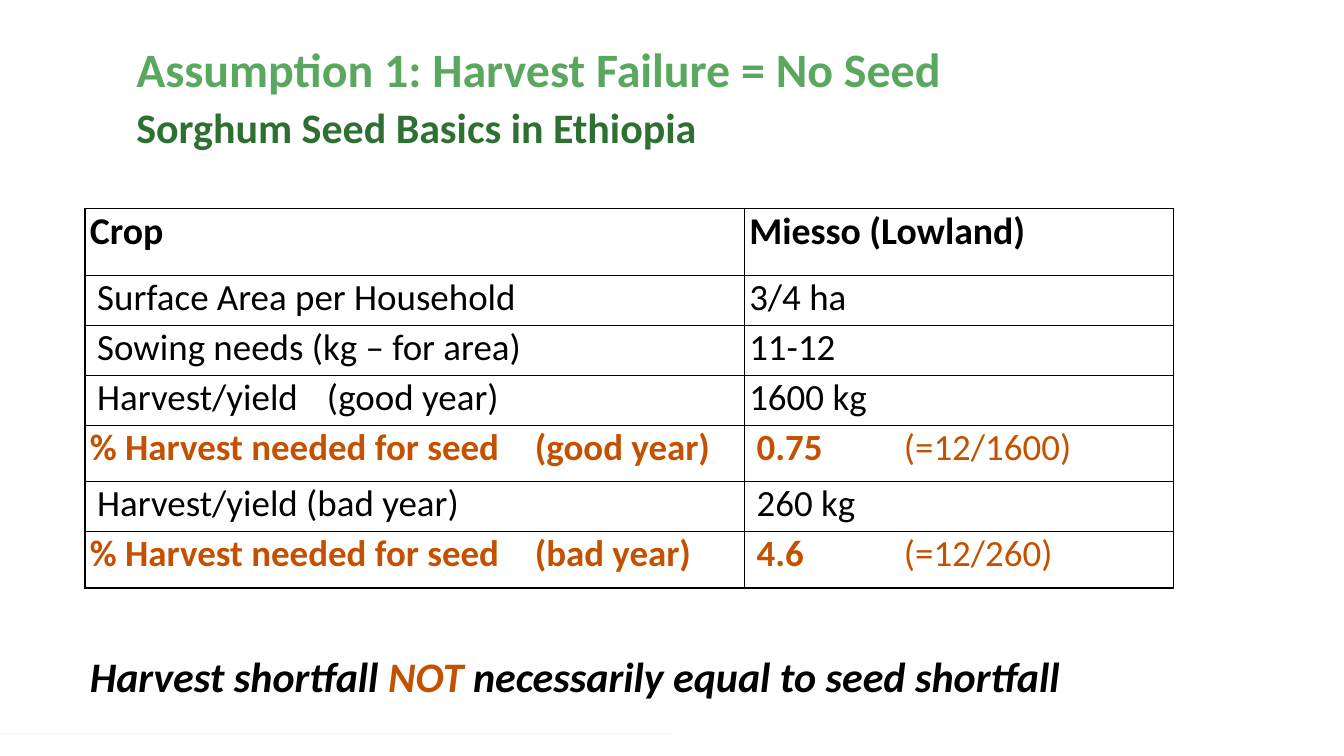
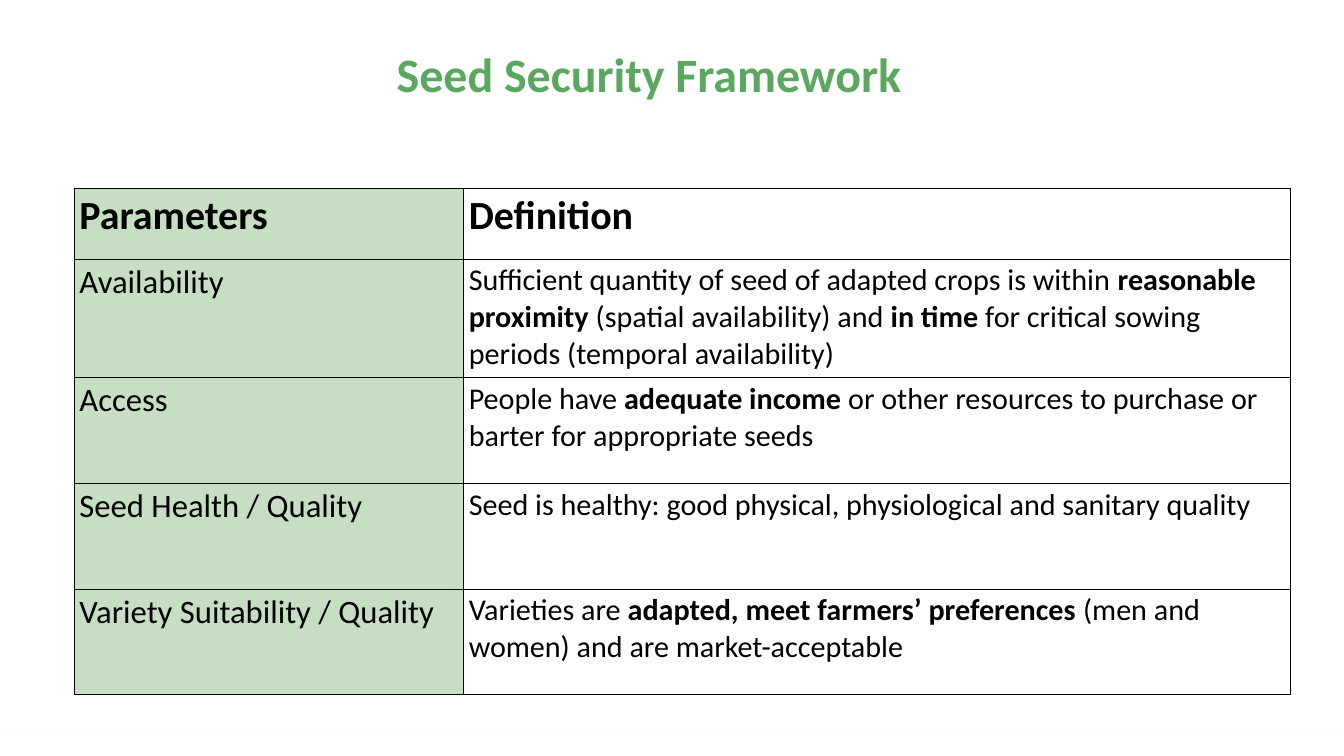
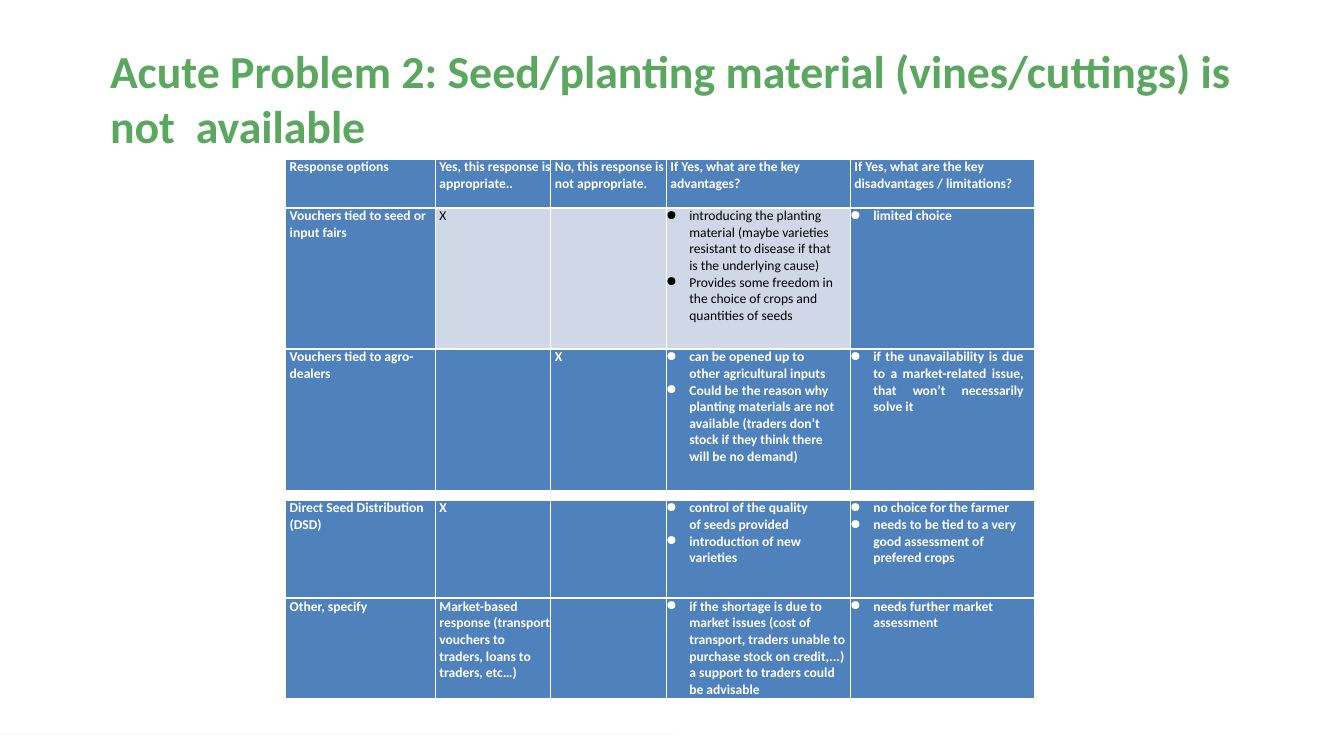
from lxml.etree import SubElement
from pptx import Presentation
from pptx.dml.color import RGBColor
from pptx.enum.text import PP_ALIGN
from pptx.oxml.ns import qn
from pptx.util import Emu, Inches, Pt

W, H, BAND = 21.99, 12.37, 0.35
FONT = "Calibri"
LEAF, FOREST, RUST = "5AA75F", "2D7031", "C35100"
BLACK, WHITE = "000000", "FFFFFF"
MINT, PALE, SAGE, BLUE, ICE = "C5DBC5", "F1F1F1", "C6DEC2", "4F81BD", "D0D8E8"


def para(*runs, **style):
    return {"runs": runs, **style}


def strong(text):
    return text, {"bold": True}


def light(text):
    return text, {"bold": False}


HARVEST_HEAD = ["Crop", "Miesso (Lowland)"]
HARVEST = [
    ("Surface Area per Household", ["3/4 ha"], 0.08),
    ("Sowing needs (kg – for area)", ["11-12"], 0.08),
    ("Harvest/yield\t(good year)", ["1600 kg"], 0.08),
    ("% Harvest needed for seed\t(good year)", ["0.75\t", light("(=12/1600)")], 0.2),
    ("Harvest/yield (bad year)", ["260 kg"], 0.2),
    ("% Harvest needed for seed\t(bad year)", ["4.6\t", light("(=12/260)")], 0.2),
]
TAKEAWAY = ["Harvest shortfall ", ("NOT ", {"color": RUST}),
            "necessarily equal to seed shortfall"]

FRAMEWORK_HEAD = ["Parameters", "Definition"]
FRAMEWORK = [
    ("Availability",
     ["Sufficient quantity of seed of adapted crops is within ",
      strong("reasonable proximity "), "(spatial availability) and ",
      strong("in time "), "for critical sowing periods (temporal availability)"]),
    ("Access",
     ["People have ", strong("adequate income "),
      "or other resources to purchase or barter for appropriate seeds"]),
    ("Seed Health / Quality",
     ["Seed is healthy: good physical, physiological and sanitary quality"]),
    ("Variety Suitability / Quality",
     ["Varieties are ", strong("adapted, meet farmers’ preferences "),
      "(men and women) and are market-acceptable"]),
]

OPTIONS_HEAD = ["Response options", "Yes, this response is appropriate..",
                "No, this response is not appropriate.",
                "If Yes, what are the key advantages?",
                "If Yes, what are the key disadvantages / limitations?"]
VOUCHERS = [
    ("Vouchers tied to seed or input fairs", "X", "",
     ["introducing the planting material (maybe varieties resistant to disease "
      "if that is the underlying cause)",
      "Provides some freedom in the choice of crops and quantities of seeds"],
     ["limited choice"]),
    ("Vouchers tied to agro-dealers", "", "X",
     ["can be opened up to other agricultural inputs",
      "Could be the reason why planting materials are not available (traders "
      "don’t stock if they think there will be no demand)"],
     ["if the unavailability is due to a market-related issue, that won’t "
      "necessarily solve it"]),
]
OTHERS = [
    ("Direct Seed Distribution (DSD)", "X", "",
     ["control of the quality of seeds provided", "introduction of new varieties"],
     ["no choice for the farmer",
      "needs to be tied to a very good assessment of prefered crops"]),
    ("Other, specify",
     "Market-based response (transport vouchers to traders, loans to traders, etc…)", "",
     ["if the shortage is due to market issues (cost of transport, traders unable to "
      "purchase stock on credit,...) a support to traders could be advisable"],
     ["needs further market assessment"]),
]
OPTION_COLS = [2.45, 1.89, 1.89, 3.01, 3.01]


def rgb(value):
    return RGBColor.from_string(value)


def write(tf, paras, **base):
    for i, item in enumerate(paras):
        st = {"size": 16, "color": BLACK, "bold": False, "italic": False, "before": 0,
              "indent": 0, "tab": None, "bullet": None, "align": None, **base, **item}
        p = tf.paragraphs[0] if i == 0 else tf.add_paragraph()
        p.space_before = Pt(st["before"])
        p.alignment = st["align"]
        pPr = p._p.get_or_add_pPr()
        pPr.set("marL", str(Inches(st["indent"])))
        if st["bullet"]:
            pPr.set("indent", str(-Inches(st["indent"])))
            SubElement(pPr, qn("a:buChar"), char=st["bullet"])
        if st["tab"]:
            tabs = SubElement(pPr, qn("a:tabLst"))
            SubElement(tabs, qn("a:tab"), pos=str(Inches(st["tab"])), algn="l")
        for run in st["runs"]:
            text, own = (run, {}) if isinstance(run, str) else run
            look = {**st, **own}
            r = p.add_run()
            r.text = text
            r.font.name = FONT
            r.font.size = Pt(look["size"])
            r.font.bold = look["bold"]
            r.font.italic = look["italic"]
            r.font.color.rgb = rgb(look["color"])


def add_text(s, box, paras, inset=0, **base):
    tf = s.shapes.add_textbox(*map(Inches, box)).text_frame
    tf.word_wrap = True
    tf.margin_left = tf.margin_right = tf.margin_bottom = 0
    tf.margin_top = Inches(inset)
    write(tf, paras, **base)


def add_title(s, box, paras, inset=0, size=56.5):
    add_text(s, box, paras, inset, size=size, color=LEAF, bold=True)


def add_slide(prs):
    s = prs.slides.add_slide(prs.slide_layouts[6])
    mid = W / 2
    half = [(mid, 0), (0, 0), (0, H), (mid, H), (mid, H - BAND),
            (BAND, H - BAND), (BAND, BAND), (mid, BAND)]
    for color, points in ((MINT, half), (PALE, [(W - x, y) for x, y in half])):
        builder = s.shapes.build_freeform(*points[0], scale=914400.0)
        builder.add_line_segments(points[1:], close=True)
        sp = builder.convert_to_shape()
        sp.shadow.inherit = False
        sp.fill.solid()
        sp.fill.fore_color.rgb = rgb(color)
        sp.line.fill.background()
    return s


def set_borders(cell, color, widths):
    tcPr = cell._tc.get_or_add_tcPr()
    for side, width in zip("LRTB", widths):
        ln = SubElement(tcPr, qn("a:ln" + side), w=str(Pt(width)))
        fill = SubElement(ln, qn("a:solidFill"))
        SubElement(fill, qn("a:srgbClr"), val=color)


def add_grid(s, left, top, cols, heights, rows, color, outer, across, down, inset=0):
    frame = s.shapes.add_table(len(rows), len(cols), Inches(left), Inches(top),
                               Inches(sum(cols)), Inches(sum(heights)))
    table = frame.table
    table.first_row = table.horz_banding = False
    for column, width in zip(table.columns, cols):
        column.width = Inches(width)
    for r, height in enumerate(heights):
        table.rows[r].height = Inches(height)
        for c, (paras, fill, right) in enumerate(rows[r]):
            cell = table.cell(r, c)
            cell.margin_left = cell.margin_bottom = Emu(0)
            cell.margin_top, cell.margin_right = Inches(inset), Inches(right)
            set_borders(cell, color, (
                down if c else outer, down if c < len(cols) - 1 else outer,
                across if r else outer, across if r < len(rows) - 1 else outer))
            if fill:
                cell.fill.solid()
                cell.fill.fore_color.rgb = rgb(fill)
            else:
                cell.fill.background()
            write(cell.text_frame, paras)


def harvest_slide(prs):
    s = add_slide(prs)
    add_title(s, (2.23, 0.55, 13.85, 1.95), [
        para("Assumption 1: Harvest Failure = No Seed", before=7.3),
        para("Sorghum Seed Basics in Ethiopia", before=5.2, size=49.5, color=FOREST),
    ], inset=0.1)
    rows = [[([para(t, size=44.5, bold=True, indent=0.08)], None, 0) for t in HARVEST_HEAD]]
    for label, value, indent in HARVEST:
        key = label.startswith("%")
        look = {"size": 43.5, "bold": key, "color": RUST if key else BLACK, "before": 0.2}
        rows.append([
            ([para(label, indent=0.08 if key else 0.2, tab=7.28 if key else 3.76, **look)],
             None, 0),
            ([para(*value, indent=indent, tab=2.41, **look)], None, 0)])
    heights = [1.09, 0.82, 0.82, 0.82, 0.92, 0.82, 0.92]
    add_grid(s, 1.39, 3.41, [10.79, 7.02], heights, rows, BLACK, 2.25, 1, 1)
    add_text(s, (1.47, 10.63, 16.42, 0.85), [para(*TAKEAWAY, before=0.9)], 0.01,
             size=49.5, bold=True, italic=True)


def framework_slide(prs):
    s = add_slide(prs)
    add_title(s, (6.49, 0.71, 8.77, 0.98), [para("Seed Security Framework", before=1.4)], 0.02)
    rows = [[([para(t, size=47, bold=True, before=3, indent=0.08)], fill, 0)
             for t, fill in zip(FRAMEWORK_HEAD, (SAGE, None))]]
    for name, definition in FRAMEWORK:
        rows.append([([para(name, size=38.5, before=3.8, indent=0.08)], SAGE, 0),
                     ([para(*definition, size=35.5, before=3.5, indent=0.08)], None, 0)])
    add_grid(s, 1.22, 3.09, [6.37, 13.53], [1.15, 1.94] + [1.73] * 3, rows,
             BLACK, 1.5, 1.5, 1.5, inset=0.05)


def option_row(values, advantage_right=0, pale=(), justified=False):
    row = []
    for c, value in enumerate(values):
        look = {"color": BLACK if c in pale else WHITE, "bold": c not in pale}
        if isinstance(value, str):
            paras = [para(value, before=5, indent=0.07, **look)] if value else []
        else:
            align = PP_ALIGN.JUSTIFY if justified and c == 4 else None
            paras = [para(t, before=0 if i else 5, indent=0.38, bullet="●", align=align, **look)
                     for i, t in enumerate(value)]
        right = {3: advantage_right, 4: 0.17}.get(c, 0)
        row.append((paras, ICE if c in pale else BLUE, right))
    return row


def options_slide(prs):
    s = add_slide(prs)
    add_title(s, (1.8, 0.7, 18.38, 1.82), [
        para("Acute Problem 2: Seed/planting material (vines/cuttings) is not  available")],
        size=54)
    fairs, dealers = VOUCHERS
    direct, other = OTHERS
    upper = [option_row(OPTIONS_HEAD), option_row(fairs, 0.27, pale=(1, 2, 3)),
             option_row(dealers, 0.2, justified=True)]
    lower = [option_row(direct, 0.6), option_row(other)]
    for top, heights, rows in ((2.6, [0.8, 2.31, 2.31], upper), (8.18, [1.61, 1.64], lower)):
        add_grid(s, 4.67, top, OPTION_COLS, heights, rows, WHITE, 1, 3, 1)


def main():
    prs = Presentation()
    prs.slide_width, prs.slide_height = Inches(W), Inches(H)
    for build in (harvest_slide, framework_slide, options_slide):
        build(prs)
    prs.save("out.pptx")


if __name__ == "__main__":
    main()
